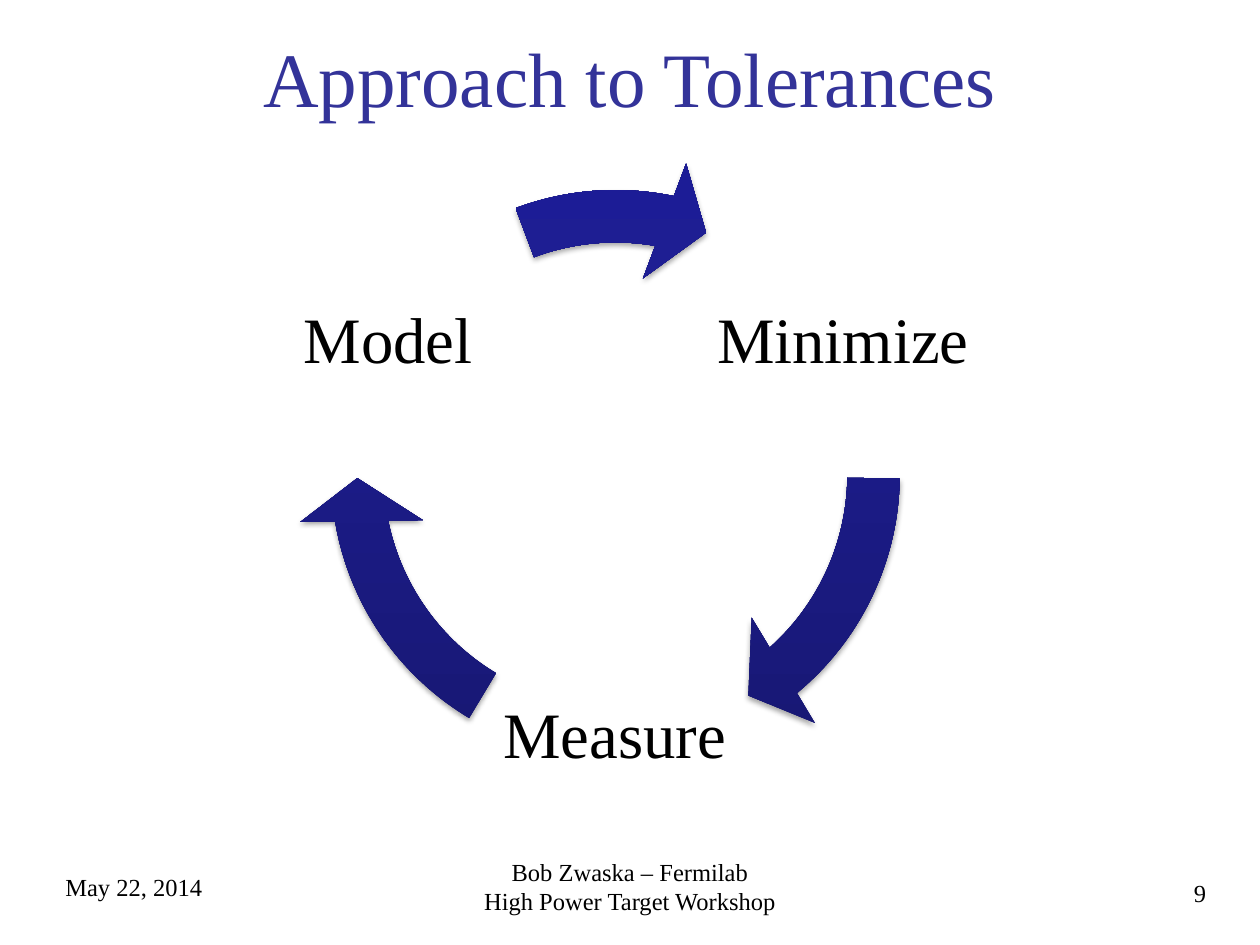
import copy

import pptx
import pptx.util
import pptx.dml.color
import pptx.enum.shapes
import pptx.enum.text
import pptx.oxml
import pptx.oxml.ns

Inches, Pt = pptx.util.Inches, pptx.util.Pt
ALIGN = pptx.enum.text.PP_ALIGN
ANCHOR = pptx.enum.text.MSO_ANCHOR

FONT = "Times New Roman"
COLORS = {
    "title": "333399",
    "text": "000000",
    "arrow_low": "171771",
    "arrow_mid": "1E1E93",
    "arrow_high": "1C1C96",
}


def rgb(name):
    return pptx.dml.color.RGBColor.from_string(COLORS[name])


def add_text(slide, box, text, size, align, anchor=ANCHOR.MIDDLE, color="text",
             inset=0.1, line_spacing=None):
    sp = slide.shapes.add_textbox(*map(Inches, box))
    tf = sp.text_frame
    tf.word_wrap = True
    tf.vertical_anchor = anchor
    tf.margin_left = tf.margin_right = Inches(inset)
    tf.text = text
    for p in tf.paragraphs:
        p.alignment = align
        if line_spacing:
            p.line_spacing = line_spacing
        for r in p.runs:
            r.font.name = FONT
            r.font.size = Pt(size)
            r.font.color.rgb = rgb(color)


def add_cycle_arrow(slide, box, head_angle, tail_angle):
    sp = slide.shapes.add_shape(
        pptx.enum.shapes.MSO_SHAPE.CIRCULAR_ARROW, *map(Inches, box))
    # Band width, head length, head angle, tail angle, head width;
    # angles are in 60000ths of a degree, scaled by 100000
    values = (0.082, 5.758, head_angle * 0.6, tail_angle * 0.6, 0.096)
    for i, value in enumerate(values):
        sp.adjustments[i] = value
    sp.line.fill.background()

    # Gradient from dark at the bottom to lighter at the top
    sp.fill.gradient()
    sp.fill.gradient_angle = 90
    gs_list = sp._element.spPr.find(".//" + pptx.oxml.ns.qn("a:gsLst"))
    gs_list.append(copy.deepcopy(gs_list[-1]))
    stops = ((0, "arrow_low"), (0.8, "arrow_mid"), (1, "arrow_high"))
    for stop, (position, color) in zip(sp.fill.gradient_stops, stops):
        stop.position = position
        stop.color.rgb = rgb(color)

    # Soft shadow straight below
    sp.shadow.inherit = False
    effects = sp._element.spPr.find(pptx.oxml.ns.qn("a:effectLst"))
    effects.append(pptx.oxml.parse_xml(
        f'<a:outerShdw {pptx.oxml.ns.nsdecls("a")} blurRad="{Pt(3.1)}" '
        f'dist="{Pt(1.8)}" dir="5400000" rotWithShape="0">'
        '<a:srgbClr val="000000"><a:alpha val="35000"/></a:srgbClr>'
        '</a:outerShdw>'))


def add_cycle(slide, box):
    left, top, width, height = box
    label_size = 2.14
    # Label offsets from the cycle's box, then head and tail angles of the next arrow
    steps = (
        ("Minimize", 3.61, 0.42, 49.42, 0.85),
        ("Measure", 1.8, 3.55, 169.56, 120.98),
        ("Model", 0, 0.42, 280.97, 249.44),
    )
    ring = (left + 0.34, top, width - 0.68, height)
    for label, dx, dy, head_angle, tail_angle in steps:
        add_text(slide, (left + dx, top + dy, label_size, label_size), label, 37,
                 ALIGN.CENTER, inset=0.05, line_spacing=0.9)
        add_cycle_arrow(slide, ring, head_angle, tail_angle)


def add_footer(slide, box):
    left, top, width, height = box
    add_text(slide, (left, top + 0.08, 2.33, 0.42), "May 22, 2014", 14, ALIGN.LEFT)
    add_text(slide, (left + 2.08, top, 5, height),
             "Bob Zwaska – Fermilab\nHigh Power Target Workshop", 14,
             ALIGN.CENTER, ANCHOR.TOP)
    add_text(slide, (left + width - 2.25, top + 0.17, 2.25, 0.34), "9", 14,
             ALIGN.RIGHT, ANCHOR.TOP)


def main():
    prs = pptx.Presentation()
    prs.slide_width, prs.slide_height = Inches(10), Inches(7.5)
    slide = prs.slides.add_slide(prs.slide_layouts[6])
    add_footer(slide, (0.42, 6.75, 9.25, 0.57))
    add_text(slide, (0.5, 0.17, 9, 0.87), "Approach to Tolerances", 44,
             ALIGN.CENTER, color="title")
    add_cycle(slide, (2.01, 1.23, 5.75, 5.07))
    prs.save("out.pptx")


if __name__ == "__main__":
    main()
